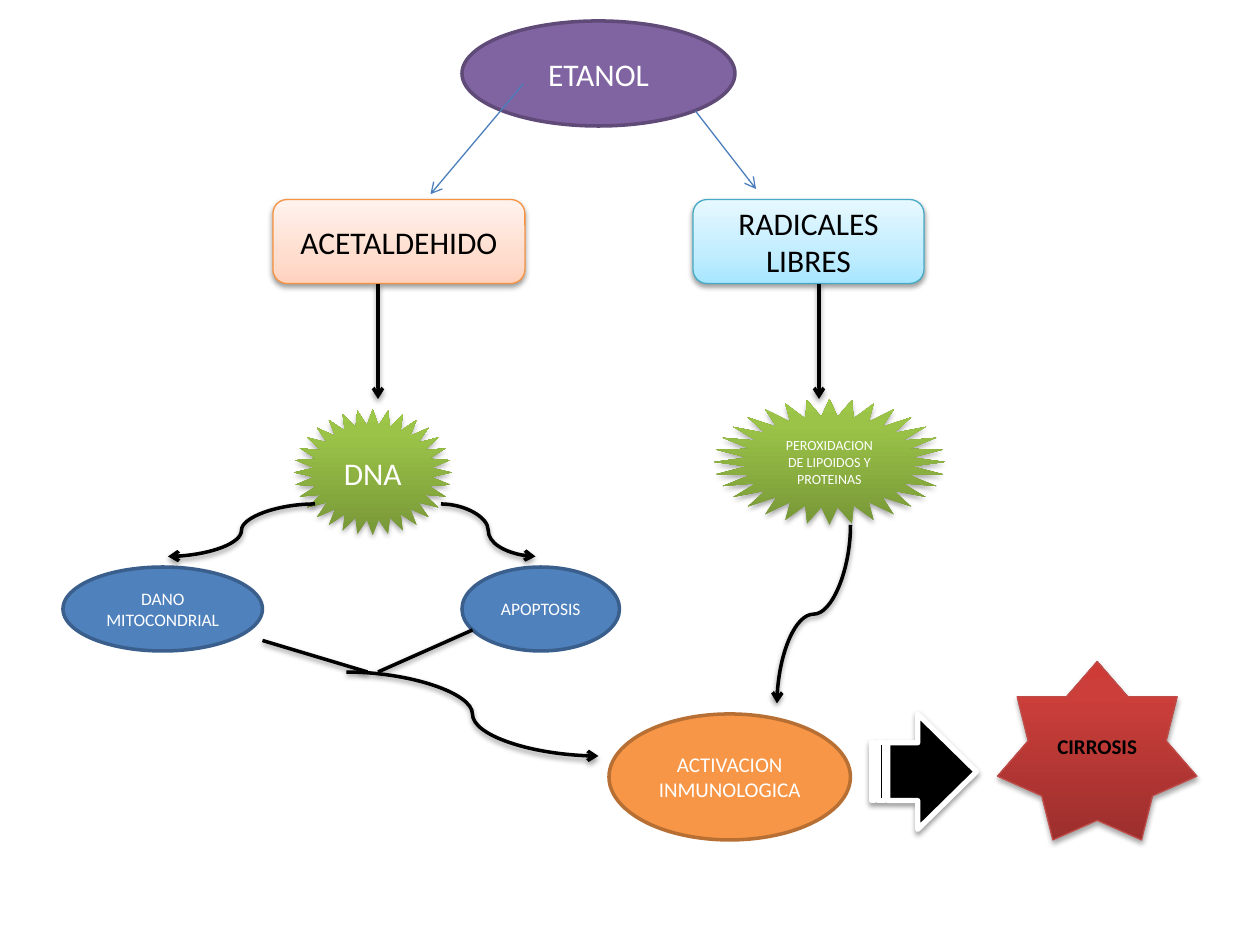
"""Build a one-page flow diagram of how ethanol leads to cirrhosis."""
import pptx
import pptx.util
import pptx.dml.color
import pptx.enum.shapes
import pptx.enum.text
import pptx.oxml
import pptx.oxml.ns
import lxml.etree

Pt = pptx.util.Pt
Kind = pptx.enum.shapes.MSO_SHAPE
Link = pptx.enum.shapes.MSO_CONNECTOR
qn = pptx.oxml.ns.qn

THEME = {
    "font": "Calibri",
    "white": "FFFFFF",
    "black": "000000",
    "thin": 0.75,
    "thick": 2,
    "heavy": 3,
    "title": 18,
    "label": 12,
    "small": 10,
    "tiny": 8,
    "soft": {"alpha": 38, "blur": 3.1, "distance": 1.6},
    "deep": {"alpha": 35, "blur": 3.1, "distance": 1.8},
    "purple": ("8064A2", "5F4A78"),
    "blue": ("4F81BD", "3A5F8C"),
    "orange": ("F79646", "B76F34"),
    "ink": ("000000", "FFFFFF"),
    "peach": ([(0, "FFD2BD"), (35, "FFDED0"), (100, "FFF2ED")], "F69240"),
    "sky": ([(0, "A7E6FF"), (35, "C1EDFF"), (100, "E7F8FF")], "46AAC5"),
    "green": ([(0, "779737"), (80, "9BC348"), (100, "9DC746")], None),
    "red": ([(0, "9C2F2D"), (80, "CB3E3A"), (100, "CE3B37")], "BF4C48"),
    "link": "4B7EBC",
}

NODES = [
    ("ETANOL", Kind.OVAL, (264, 12, 156, 60), "purple", {}),
    ("ACETALDEHIDO", Kind.FLOWCHART_ALTERNATE_PROCESS, (156, 114, 144, 48), "peach",
     {"color": "black", "width": "thin", "shadow": "soft"}),
    ("RADICALES LIBRES", Kind.FLOWCHART_ALTERNATE_PROCESS, (396, 114, 132, 48), "sky",
     {"color": "black", "width": "thin", "shadow": "soft"}),
    ("DNA", Kind.STAR_32_POINT, (168, 234, 90, 72), "green", {"shadow": "deep"}),
    ("DANO MITOCONDRIAL", Kind.OVAL, (36, 324, 114, 48), "blue", {"size": "small"}),
    ("APOPTOSIS", Kind.OVAL, (264, 324, 90, 48), "blue", {"size": "small"}),
    ("PEROXIDACION DE LIPOIDOS Y PROTEINAS", Kind.STAR_32_POINT, (408, 228, 132, 72),
     "green", {"size": "tiny", "shadow": "deep", "adjust": [0.36]}),
    ("ACTIVACION INMUNOLOGICA", Kind.OVAL, (348, 408, 138, 72), "orange",
     {"size": "label"}),
    ("", Kind.STRIPED_RIGHT_ARROW, (498, 408, 60, 66), "ink",
     {"width": "heavy", "shadow": "soft", "adjust": [0.5, 0.56]}),
    ("CIRROSIS", Kind.STAR_7_POINT, (570, 378, 114, 102), "red",
     {"size": "label", "color": "black", "bold": True, "width": "thin",
      "shadow": "deep"}),
]

THIN = {"color": "link", "width": "thin", "shadow": None}
CURVE = {"kind": Link.CURVE}
LINKS = [
    ((299, 48), (246, 111), THIN),
    ((397.5, 63.5), (432, 108), THIN),
    ((216, 162), (216, 228), {}),
    ((468, 162), (468, 228), {}),
    ((180, 288), (96, 318), CURVE),
    ((252, 288), (306, 318), CURVE),
    ((198, 384), (342, 432), CURVE),
    ((486, 300), (444, 402), {"kind": Link.CURVE, "upright": True}),
    ((150, 366), (210, 384), {"arrow": False}),
    ((270, 360), (216, 384), {"arrow": False}),
]


def rgb(value):
    return pptx.dml.color.RGBColor.from_string(value)


def add_colour(parent, value):
    return lxml.etree.SubElement(parent, qn("a:srgbClr"), val=value)


def set_shadow(properties, name):
    effects = properties.find(qn("a:effectLst"))
    if effects is None:
        effects = lxml.etree.SubElement(properties, qn("a:effectLst"))
    if name:
        look = THEME[name]
        shadow = lxml.etree.SubElement(
            effects, qn("a:outerShdw"), blurRad=str(Pt(look["blur"])),
            dist=str(Pt(look["distance"])), dir="5400000", rotWithShape="0")
        colour = add_colour(shadow, THEME["black"])
        lxml.etree.SubElement(colour, qn("a:alpha"), val=str(look["alpha"] * 1000))


def set_fill(shape, fill):
    if isinstance(fill, str):
        shape.fill.solid()
        shape.fill.fore_color.rgb = rgb(fill)
        return
    shape.fill.gradient()
    shape.fill.gradient_angle = 90
    stops = next(shape._element.spPr.iter(qn("a:gsLst")))
    for stop in list(stops):
        stops.remove(stop)
    for place, value in fill:
        stop = lxml.etree.SubElement(stops, qn("a:gs"), pos=str(place * 1000))
        add_colour(stop, value)


def write_text(box, text, size="title", color="white", bold=False):
    frame = box.text_frame
    frame.word_wrap = True
    frame.vertical_anchor = pptx.enum.text.MSO_ANCHOR.MIDDLE
    para = frame.paragraphs[0]
    para.alignment = pptx.enum.text.PP_ALIGN.CENTER
    span = para.add_run()
    span.text = text
    span.font.name = THEME["font"]
    span.font.size = Pt(THEME[size])
    span.font.bold = bold
    span.font.color.rgb = rgb(THEME[color])


def add_node(page, text, kind, frame, look, width="thick", shadow=None, adjust=(),
             **text_format):
    box = page.shapes.add_shape(kind, *map(Pt, frame))
    for index, value in enumerate(adjust):
        box.adjustments[index] = value
    fill, outline = THEME[look]
    set_fill(box, fill)
    if outline:
        box.line.color.rgb = rgb(outline)
        box.line.width = Pt(THEME[width])
    else:
        box.line.fill.background()
    box.shadow.inherit = False
    set_shadow(box._element.spPr, shadow)
    if text:
        write_text(box, text, **text_format)


def add_link(page, start, end, kind=Link.STRAIGHT, color="black", width="thick",
             shadow="soft", arrow=True, upright=False):
    if upright:
        middle_x, middle_y = (start[0] + end[0]) / 2, (start[1] + end[1]) / 2
        half_x, half_y = (end[1] - start[1]) / 2, (start[0] - end[0]) / 2
        start = (middle_x - half_x, middle_y - half_y)
        end = (middle_x + half_x, middle_y + half_y)
    link = page.shapes.add_connector(kind, *map(Pt, start + end))
    properties = link._element.spPr
    if upright:
        properties.find(qn("a:xfrm")).set("rot", "5400000")
    link.line.color.rgb = rgb(THEME[color])
    link.line.width = Pt(THEME[width])
    if arrow:
        lxml.etree.SubElement(properties.find(qn("a:ln")), qn("a:tailEnd"), type="arrow")
    set_shadow(properties, shadow)


def main():
    deck = pptx.Presentation()
    deck.slide_width, deck.slide_height = Pt(720), Pt(540)
    page = deck.slides.add_slide(deck.slide_layouts[6])
    for text, kind, frame, look, options in NODES:
        add_node(page, text, kind, frame, look, **options)
    for start, end, options in LINKS:
        add_link(page, start, end, **options)
    deck.save("out.pptx")


if __name__ == "__main__":
    main()
